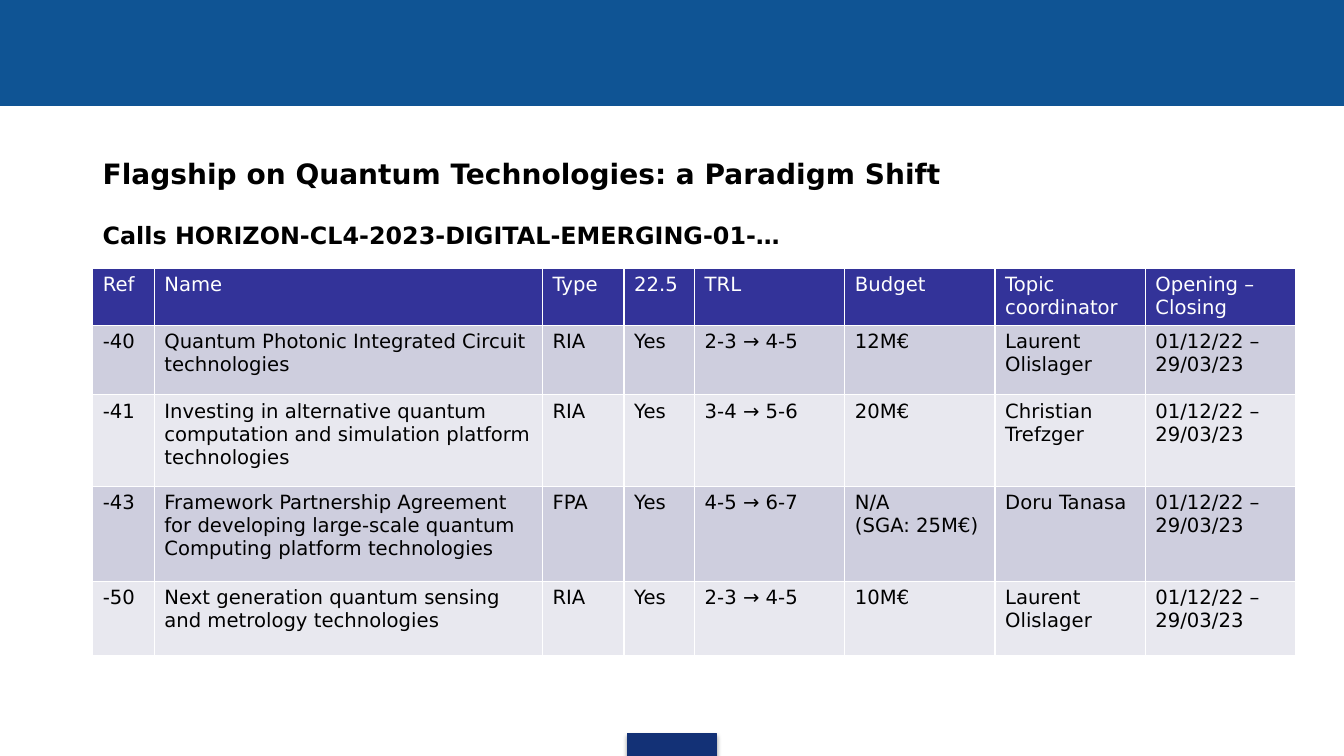
"""Build the slide on the quantum flagship calls."""
import copy

import pptx
import pptx.dml.color
import pptx.enum.shapes
import pptx.oxml
import pptx.oxml.ns
import pptx.util
from pptx.util import Inches

FONT = "DejaVu Sans"
COLORS = {
    "band": "0F5494",
    "foot": "133176",
    "head": "333399",
    "odd": "CECEDE",
    "even": "E8E8EF",
    "white": "FFFFFF",
    "black": "000000",
}
COLS = [0.61, 3.85, 0.81, 0.7] + [1.49] * 4
HEIGHTS = [0.55, 0.69, 0.91, 0.94, 0.74]
DATES = "01/12/22 – 29/03/23"
CALLS = [
    ["Ref", "Name", "Type", "22.5", "TRL", "Budget", "Topic coordinator", "Opening – Closing"],
    ["-40", "Quantum Photonic Integrated Circuit technologies",
     "RIA", "Yes", "2-3 → 4-5", "12M€", "Laurent Olislager", DATES],
    ["-41", "Investing in alternative quantum computation and simulation platform technologies",
     "RIA", "Yes", "3-4 → 5-6", "20M€", "Christian Trefzger", DATES],
    ["-43", "Framework Partnership Agreement for developing large-scale quantum "
     "Computing platform technologies",
     "FPA", "Yes", "4-5 → 6-7", "N/A\n(SGA: 25M€)", "Doru Tanasa", DATES],
    ["-50", "Next generation quantum sensing and metrology technologies",
     "RIA", "Yes", "2-3 → 4-5", "10M€", "Laurent Olislager", DATES],
]


def rgb(name):
    """Return the named colour."""
    return pptx.dml.color.RGBColor.from_string(COLORS[name])


def write(para, text, size=14, color="black", bold=False, before=0):
    """Write formatted text into a paragraph."""
    para.text = text
    para.space_before = pptx.util.Pt(before)
    for run in para.runs:
        run.font.name = FONT
        run.font.size = pptx.util.Pt(size)
        run.font.bold = bold
        run.font.color.rgb = rgb(color)
    for gap in para._p.findall(pptx.oxml.ns.qn("a:br")):
        gap.append(copy.deepcopy(para.runs[0].font._element))


def add_bar(slide, left, top, width, height, color):
    """Add a plain filled rectangle."""
    bar = slide.shapes.add_shape(
        pptx.enum.shapes.MSO_SHAPE.RECTANGLE,
        Inches(left), Inches(top), Inches(width), Inches(height))
    bar.shadow.inherit = False
    bar.fill.solid()
    bar.fill.fore_color.rgb = rgb(color)
    bar.line.color.rgb = rgb(color)
    bar.line.width = pptx.util.Pt(0.75)
    return bar


def add_shade(shape):
    """Give a shape a soft shadow below it."""
    space = pptx.oxml.ns.nsdecls("a")
    shade = pptx.oxml.parse_xml(
        f'<a:outerShdw {space} blurRad="39370" dist="22860" dir="5400000" rotWithShape="0">'
        f'<a:srgbClr val="{COLORS["black"]}"><a:alpha val="35000"/></a:srgbClr></a:outerShdw>')
    shape._element.spPr.find(pptx.oxml.ns.qn("a:effectLst")).append(shade)


def add_title(slide):
    """Add the title and the line that names the calls."""
    box = slide.shapes.add_textbox(Inches(0.92), Inches(1.5), Inches(12.09), Inches(1.1))
    frame = box.text_frame
    frame.word_wrap = True
    write(frame.paragraphs[0], "Flagship on Quantum Technologies: a Paradigm Shift",
          size=20, bold=True)
    write(frame.add_paragraph(), "Calls HORIZON-CL4-2023-DIGITAL-EMERGING-01-…",
          size=17, bold=True, before=22)


def set_edge(cell):
    """Draw thin white borders round a cell."""
    props = cell._tc.get_or_add_tcPr()
    space = pptx.oxml.ns.nsdecls("a")
    for place, side in enumerate("LRTB"):
        props.insert(place, pptx.oxml.parse_xml(
            f'<a:ln{side} {space} w="12700"><a:solidFill>'
            f'<a:srgbClr val="{COLORS["white"]}"/></a:solidFill></a:ln{side}>'))


def add_calls(slide):
    """Add the table of calls."""
    frame = slide.shapes.add_table(
        len(CALLS), len(COLS), Inches(0.92), Inches(2.66),
        Inches(sum(COLS)), Inches(sum(HEIGHTS)))
    table = frame.table
    for col, width in zip(table.columns, COLS):
        col.width = Inches(width)
    for num, (row, height) in enumerate(zip(table.rows, HEIGHTS)):
        row.height = Inches(height)
        fill = "head" if num == 0 else "odd" if num % 2 else "even"
        for cell, text in zip(row.cells, CALLS[num]):
            cell.fill.solid()
            cell.fill.fore_color.rgb = rgb(fill)
            set_edge(cell)
            write(cell.text_frame.paragraphs[0], text,
                  color="white" if num == 0 else "black")


def main():
    """Build and save the slide."""
    deck = pptx.Presentation()
    deck.slide_width = Inches(13.33)
    deck.slide_height = Inches(7.5)
    slide = deck.slides.add_slide(deck.slide_layouts[6])
    add_bar(slide, 0, 0, 13.33, 1.05, "band")
    add_shade(add_bar(slide, 6.22, 7.28, 0.89, 0.22, "foot"))
    add_title(slide)
    add_calls(slide)
    deck.save("out.pptx")


if __name__ == "__main__":
    main()
